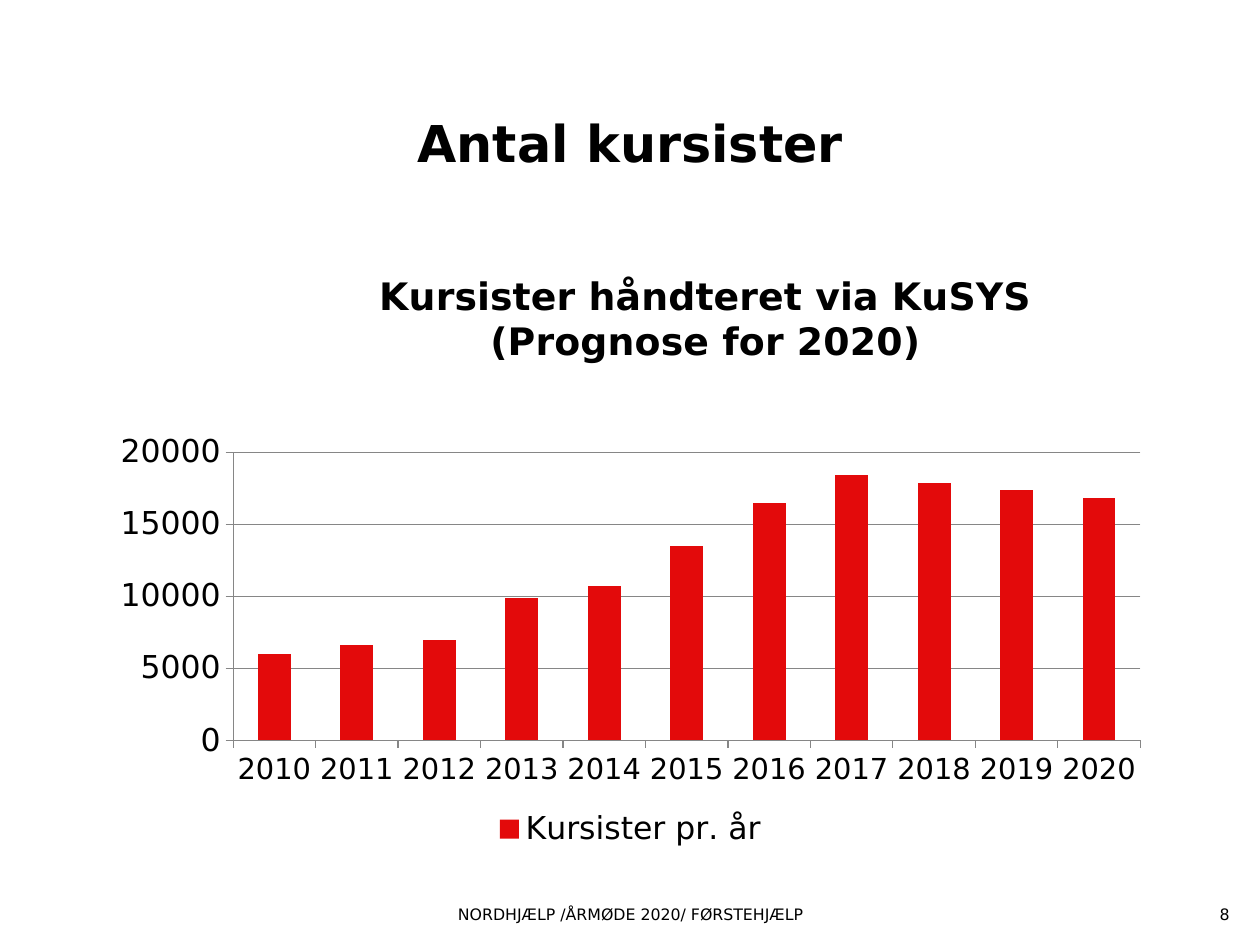
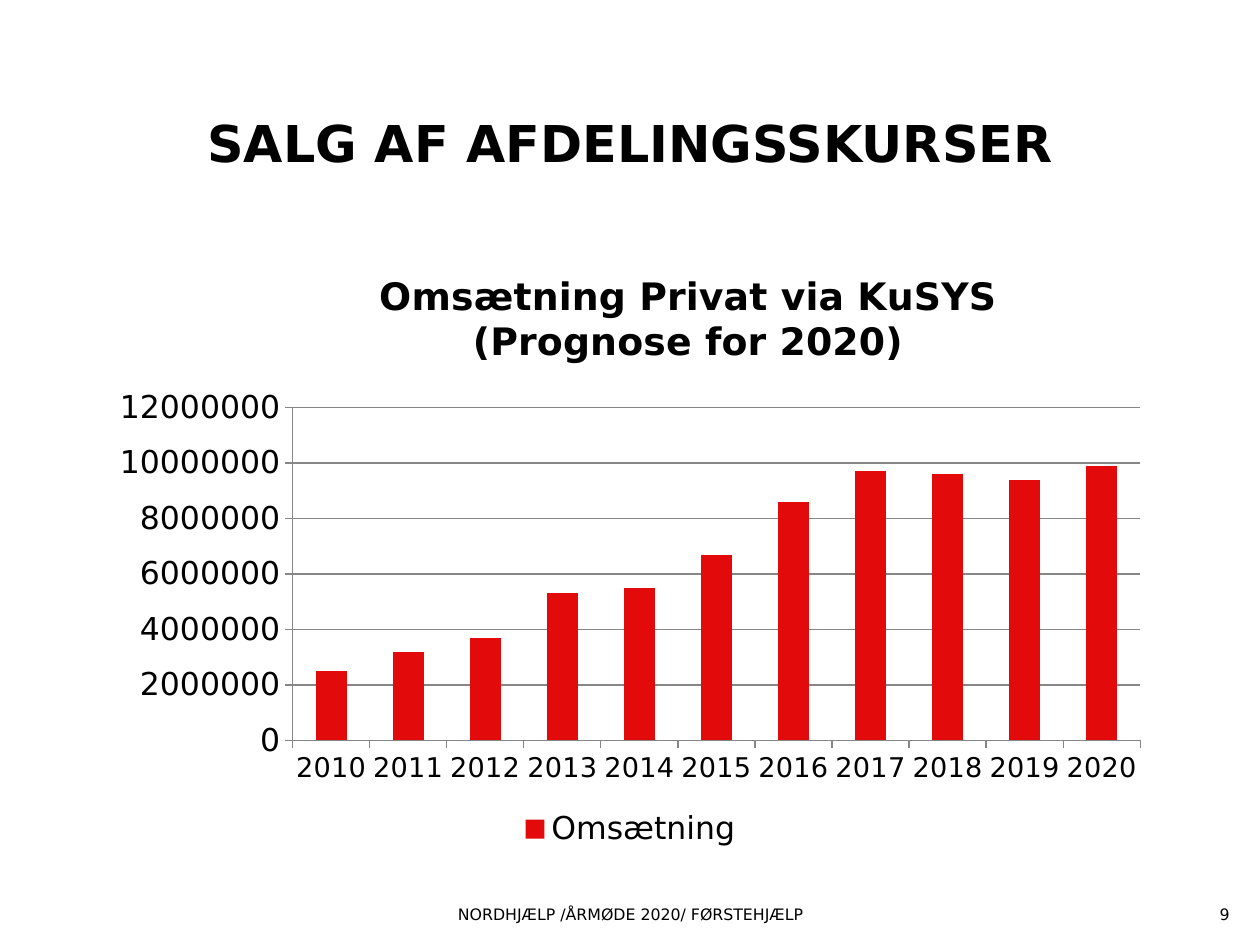
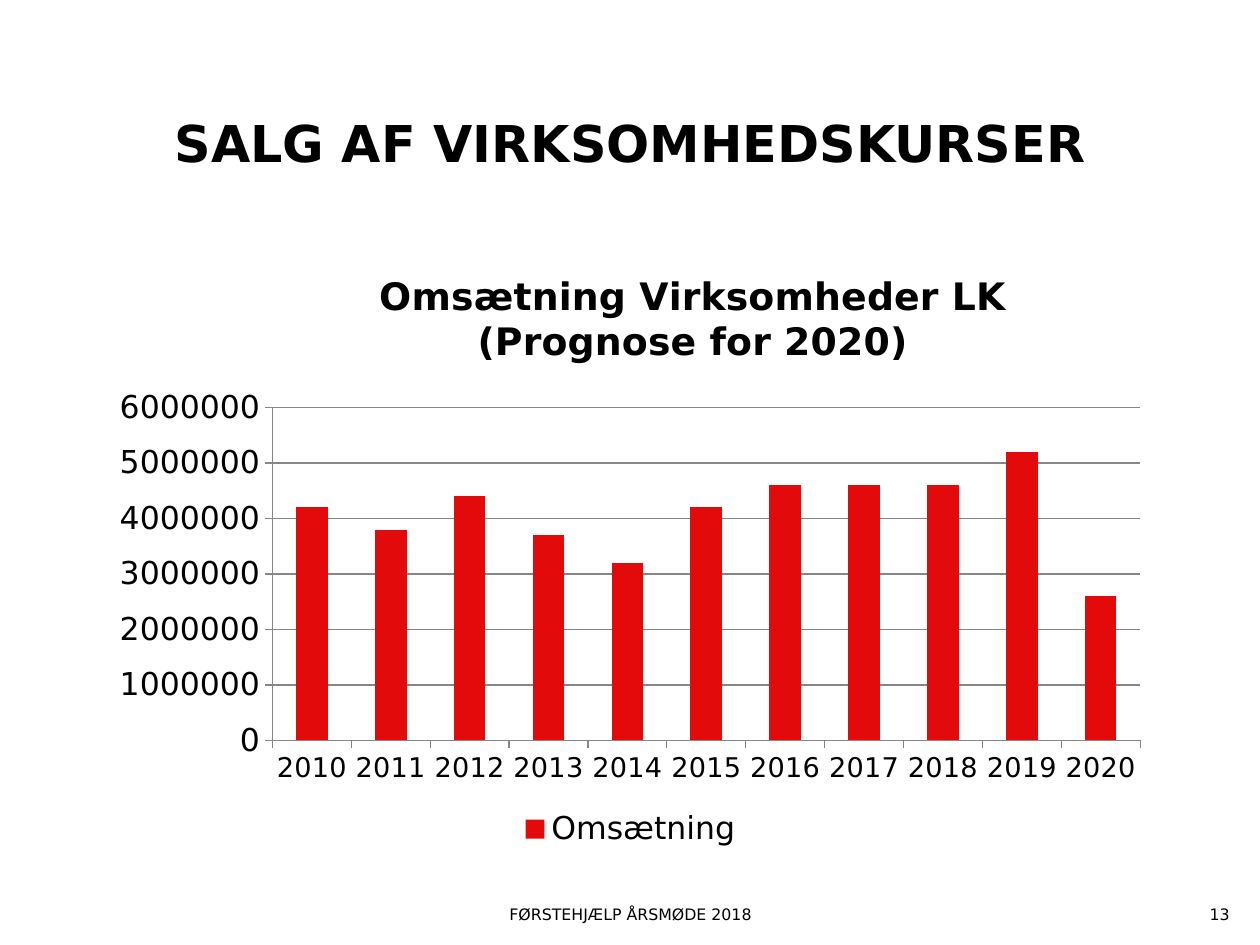
import pptx
import pptx.chart.data
import pptx.dml.color
import pptx.enum.chart
import pptx.enum.text
import pptx.oxml
import pptx.oxml.ns
import pptx.util

Pt = pptx.util.Pt
qn = pptx.oxml.ns.qn
ALIGN = pptx.enum.text.PP_ALIGN
ANCHOR = pptx.enum.text.MSO_ANCHOR

BLACK, RED, GREY = "000000", "E30A0B", "868686"
LEFT, WIDTH = Pt(56.75), Pt(607)
CHART_TOP, CHART_HEIGHT = Pt(147), Pt(341)
FOOTER_TOP, FOOTER_HEIGHT = Pt(513.5), Pt(18)
PLOT_RIGHT, PLOT_BOTTOM = 0.98, 0.81
YEARS = [str(year) for year in range(2010, 2021)]
FOOTER_2020 = "NORDHJÆLP /ÅRMØDE 2020/ FØRSTEHJÆLP"

# title, chart title, series name, values, axis maximum, axis step,
# year label size, plot left, plot top, footer, page number
SLIDES = [
    ("Antal kursister", "Kursister håndteret via KuSYS", "Kursister pr. år",
     [6000, 6600, 7000, 9900, 10700, 13500, 16500, 18400, 17900, 17400, 16800],
     20000, 5000, 16.5, 0.126, 0.327, FOOTER_2020, "8"),
    ("SALG AF AFDELINGSSKURSER", "Omsætning Privat via KuSYS", "Omsætning",
     [2500000, 3200000, 3700000, 5300000, 5500000, 6700000, 8600000, 9700000,
      9600000, 9400000, 9900000],
     12000000, 2000000, 15.5, 0.182, 0.252, FOOTER_2020, "9"),
    ("SALG AF VIRKSOMHEDSKURSER", "Omsætning Virksomheder LK", "Omsætning",
     [4200000, 3800000, 4400000, 3700000, 3200000, 4200000, 4600000, 4600000,
      4600000, 5200000, 2600000],
     6000000, 1000000, 15.5, 0.163, 0.252, "FØRSTEHJÆLP ÅRSMØDE 2018", "13"),
]


def style(font, size, bold=False, color=BLACK):
    font.name, font.size, font.bold = "DejaVu Sans", Pt(size), bold
    font.color.rgb = pptx.dml.color.RGBColor.from_string(color)


def set_layout(element, index, **settings):
    """Place a chart part by fractions of the chart, as child number index."""
    for old in element.findall(qn("c:layout")):
        element.remove(old)
    items = "".join(f'<c:{k} val="{v}"/>' for k, v in settings.items())
    element.insert(index, pptx.oxml.parse_xml(
        f'<c:layout {pptx.oxml.ns.nsdecls("c")}>'
        f"<c:manualLayout>{items}</c:manualLayout></c:layout>"))


prs = pptx.Presentation()
prs.slide_width, prs.slide_height = Pt(720), Pt(540)

for (title, chart_title, series_name, values, maximum, step, year_size,
     plot_left, plot_top, footer, number) in SLIDES:
    s = prs.slides.add_slide(prs.slide_layouts[5])

    sp = s.shapes.title
    sp.left, sp.top, sp.width, sp.height = LEFT, Pt(67.75), WIDTH, Pt(69)
    footer_box = s.shapes.add_textbox(LEFT, FOOTER_TOP, WIDTH, FOOTER_HEIGHT)
    number_box = s.shapes.add_textbox(Pt(663), FOOTER_TOP, Pt(39.75), FOOTER_HEIGHT)
    for box, text, size, bold, align, anchor in [
        (sp, title, 29, True, ALIGN.CENTER, ANCHOR.TOP),
        (footer_box, footer, 9, False, ALIGN.CENTER, ANCHOR.MIDDLE),
        (number_box, number, 9, False, ALIGN.RIGHT, ANCHOR.MIDDLE),
    ]:
        tf = box.text_frame
        tf.margin_left = tf.margin_top = tf.margin_right = tf.margin_bottom = 0
        tf.word_wrap, tf.vertical_anchor = True, anchor
        tf.auto_size = pptx.enum.text.MSO_AUTO_SIZE.NONE
        p = tf.paragraphs[0]
        p.text, p.alignment = text, align
        style(p.font, size, bold)
    sp.text_frame.paragraphs[0].line_spacing = 0.9

    data = pptx.chart.data.CategoryChartData(number_format="General")
    data.categories = YEARS
    data.add_series(series_name, values)
    chart = s.shapes.add_chart(
        pptx.enum.chart.XL_CHART_TYPE.COLUMN_CLUSTERED,
        LEFT, CHART_TOP, WIDTH, CHART_HEIGHT, data).chart
    style(chart.font, 18)

    chart.has_title = True
    tf = chart.chart_title.text_frame
    tf.text = chart_title + "\n(Prognose for 2020)"
    for p in tf.paragraphs:
        p.alignment = ALIGN.CENTER
        style(p.font, 21.6, True)
    set_layout(chart.chart_title.element, 1, xMode="edge", yMode="edge", x=0.26, y=0.02)
    set_layout(chart.element.find(".//" + qn("c:plotArea")), 0,
               layoutTarget="inner", xMode="edge", yMode="edge",
               x=plot_left, y=plot_top,
               w=round(PLOT_RIGHT - plot_left, 3), h=round(PLOT_BOTTOM - plot_top, 3))

    chart.has_legend = True
    chart.legend.position = pptx.enum.chart.XL_LEGEND_POSITION.BOTTOM
    chart.legend.include_in_layout = False
    style(chart.legend.font, 18)

    plot = chart.plots[0]
    plot.gap_width, plot.vary_by_categories = 150, False
    fill = plot.series[0].format.fill
    fill.solid()
    fill.fore_color.rgb = pptx.dml.color.RGBColor.from_string(RED)

    years, amounts = chart.category_axis, chart.value_axis
    amounts.minimum_scale, amounts.maximum_scale, amounts.major_unit = 0, maximum, step
    amounts.has_major_gridlines = True
    for axis, size in [(years, year_size), (amounts, 18)]:
        axis.major_tick_mark = pptx.enum.chart.XL_TICK_MARK.OUTSIDE
        style(axis.tick_labels.font, size)
    for part in (years, amounts, amounts.major_gridlines):
        part.format.line.width = Pt(0.75)
        part.format.line.color.rgb = pptx.dml.color.RGBColor.from_string(GREY)

prs.save("out.pptx")
